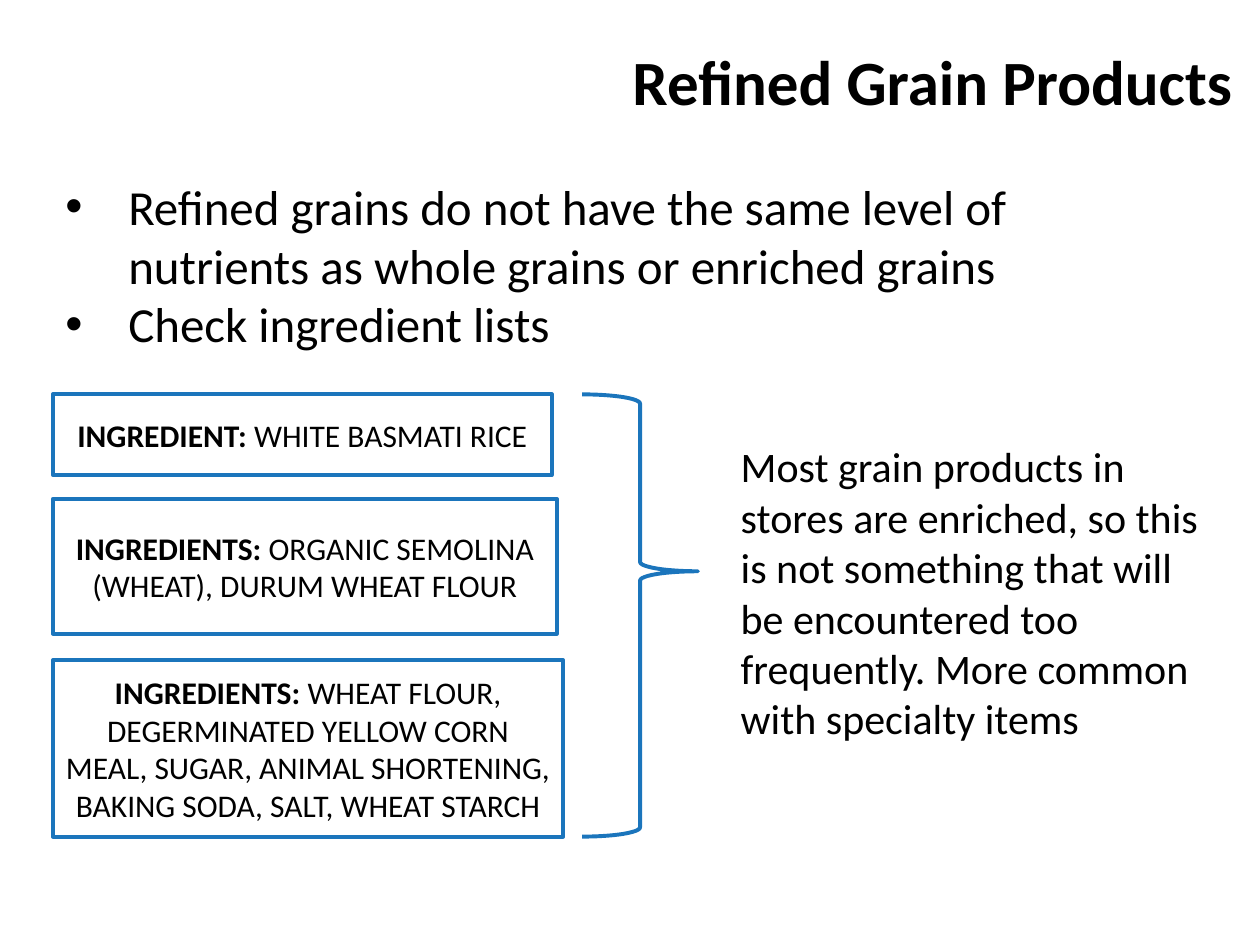
from lxml import etree
from pptx import Presentation
from pptx.dml.color import RGBColor
from pptx.enum.shapes import MSO_SHAPE
from pptx.enum.text import MSO_ANCHOR, PP_ALIGN
from pptx.oxml.ns import qn
from pptx.util import Inches, Pt

RECTANGLE, BRACE = MSO_SHAPE.RECTANGLE, MSO_SHAPE.RIGHT_BRACE
TOP, MIDDLE = MSO_ANCHOR.TOP, MSO_ANCHOR.MIDDLE
LEFT, CENTER, RIGHT = PP_ALIGN.LEFT, PP_ALIGN.CENTER, PP_ALIGN.RIGHT

COLORS = {"text": "000000", "paper": "FFFFFF", "outline": "1B75BC"}
FONT = "Calibri"
COLUMNS, ROWS = 100, 75
LABEL_LEFT = 4.2
LABELS_TOP, LABELS_BOTTOM = 31.3, 66.4

presentation = Presentation()
presentation.slide_width = Inches(10)
presentation.slide_height = Inches(7.5)
column = presentation.slide_width / COLUMNS
row = presentation.slide_height / ROWS
slide = presentation.slides.add_slide(presentation.slide_layouts[6])


def place(left, top, width, height, preset=None):
    """Add a text box, or an outlined preset shape, measured in grid cells."""
    box = [round(left * column), round(top * row), round(width * column), round(height * row)]
    if preset is None:
        return slide.shapes.add_textbox(*box)
    shape = slide.shapes.add_shape(preset, *box)
    shape.shadow.inherit = False
    shape.line.color.rgb = RGBColor.from_string(COLORS["outline"])
    shape.line.width = Pt(2.25)
    return shape


def write(shape, paragraphs, size, alignment=LEFT, anchor=TOP, bullet=False):
    """Fill a shape with paragraphs, each a list of (text, bold) runs."""
    frame = shape.text_frame
    frame.word_wrap = True
    frame.vertical_anchor = anchor
    for index, runs in enumerate(paragraphs):
        paragraph = frame.paragraphs[0] if index == 0 else frame.add_paragraph()
        paragraph.alignment = alignment
        if bullet:
            properties = paragraph._p.get_or_add_pPr()
            properties.set("marL", str(Inches(0.5)))
            properties.set("indent", str(-Inches(0.5)))
            etree.SubElement(properties, qn("a:buFont"), typeface="Arial")
            etree.SubElement(properties, qn("a:buChar"), char="•")
        for text, bold in runs:
            run = paragraph.add_run()
            run.text = text
            run.font.name = FONT
            run.font.size = Pt(size)
            run.font.bold = bold
            run.font.color.rgb = RGBColor.from_string(COLORS["text"])


title = place(20.6, 1.2, 78.2, 11.1)
write(title, [[("Refined Grain Products", True)]], 36, RIGHT, MIDDLE)
title.text_frame.paragraphs[0].line_spacing = 0.9

points = [
    "Refined grains do not have the same level of nutrients as whole grains or enriched grains",
    "Check ingredient lists",
]
write(place(LABEL_LEFT, 13.5, 90.7, 15.1), [[(point, False)] for point in points], 28, bullet=True)

# Top, width, height, heading, ingredients
labels = [
    (LABELS_TOP, 39.6, 6.4, "INGREDIENT: ", "WHITE BASMATI RICE"),
    (39.6, 40, 10.7, "INGREDIENTS: ", "ORGANIC SEMOLINA (WHEAT), DURUM WHEAT FLOUR"),
    (52.4, 40.5, LABELS_BOTTOM - 52.4, "INGREDIENTS: ",
     "WHEAT FLOUR, DEGERMINATED YELLOW CORN MEAL, SUGAR, ANIMAL SHORTENING, "
     "BAKING SODA, SALT, WHEAT STARCH"),
]
for top, width, height, heading, ingredients in labels:
    label = place(LABEL_LEFT, top, width, height, RECTANGLE)
    label.fill.solid()
    label.fill.fore_color.rgb = RGBColor.from_string(COLORS["paper"])
    write(label, [[(heading, True), (ingredients, False)]], 18, CENTER, MIDDLE)

brace = place(46.2, LABELS_TOP, 9.2, LABELS_BOTTOM - LABELS_TOP, BRACE)
brace.fill.background()
brace.adjustments[0] = 0.08
brace.adjustments[1] = 0.4

remark = (
    "Most grain products in stores are enriched, so this is not something that will be "
    "encountered too frequently. More common with specialty items"
)
write(place(57.8, 34.5, 38.8, 25.2), [[(remark, False)]], 24)

presentation.save("out.pptx")
